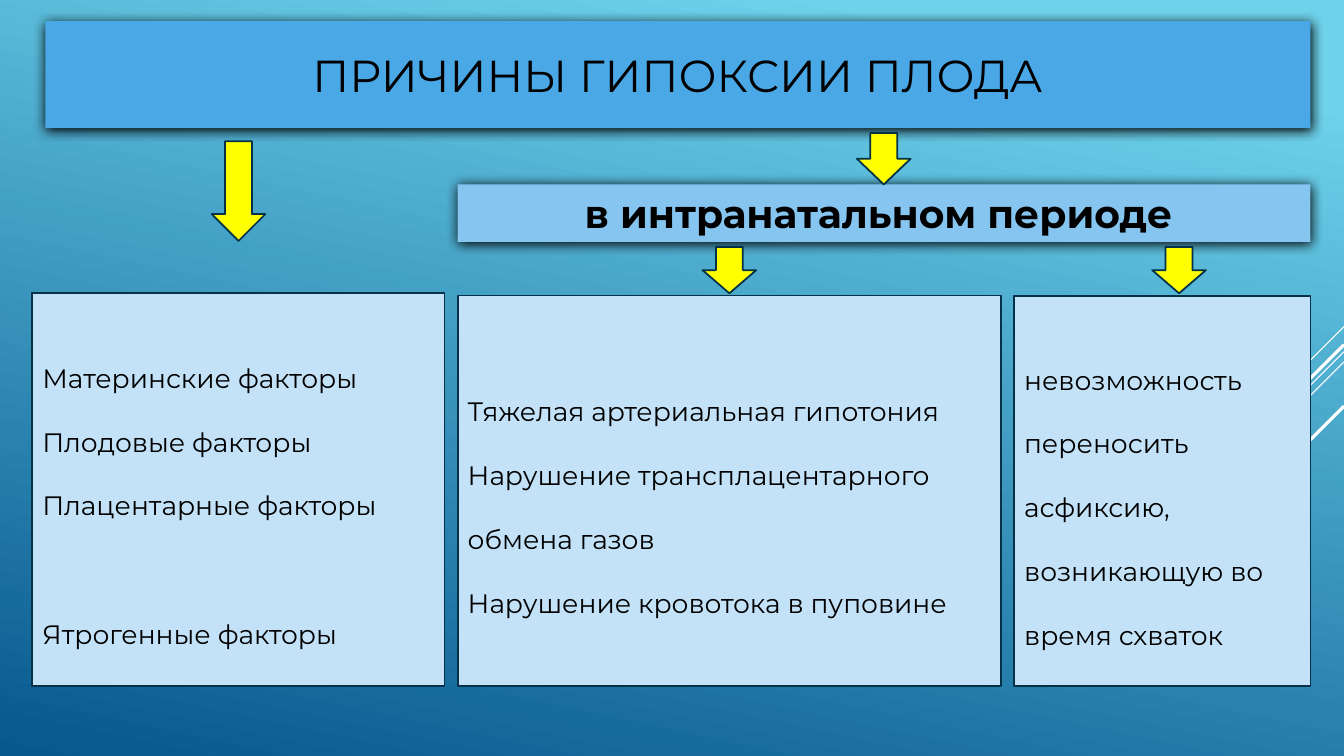
import pptx
import pptx.util
import pptx.dml.color
import pptx.enum.shapes
import pptx.enum.text
import pptx.oxml
import pptx.oxml.ns
import lxml.etree

Pt = pptx.util.Pt
RGBColor = pptx.dml.color.RGBColor
ALIGN = pptx.enum.text.PP_ALIGN

SKY = RGBColor(0x6E, 0xD2, 0xEB)
DEEP = RGBColor(0x06, 0x58, 0x8E)
BLUE = RGBColor(0x4A, 0xA8, 0xE7)
MID = RGBColor(0x86, 0xC5, 0xEF)
PALE = RGBColor(0xC3, 0xE2, 0xF7)
NAVY = RGBColor(0x04, 0x31, 0x48)
GOLD = RGBColor(0xFF, 0xFF, 0x00)
WHITE = RGBColor(0xFF, 0xFF, 0xFF)
BLACK = RGBColor(0, 0, 0)

WIDE = pptx.util.Inches(13.33)
HIGH = pptx.util.Inches(7.5)
FONT = "Montserrat"
LEFT, RIGHT, BASE = 34.05, 97.5, 90.75

MOTHER = ["Материнские факторы", "Плодовые факторы",
          "Плацентарные факторы", "Ятрогенные факторы"]
BIRTH = ["Тяжелая артериальная гипотония",
         "Нарушение трансплацентарного обмена газов",
         "Нарушение кровотока в пуповине"]
STRESS = ["невозможность переносить асфиксию, возникающую во время схваток"]


def col(share):
    return round(WIDE * share / 100)


def row(share):
    return round(HIGH * share / 100)


def node(parent, tag, **attrs):
    return lxml.etree.SubElement(parent, pptx.oxml.ns.qn(tag), attrs)


def paint(shape, color, edge=None):
    shape.fill.solid()
    shape.fill.fore_color.rgb = color
    if edge is None:
        shape.line.fill.background()
    else:
        shape.line.color.rgb = edge
        shape.line.width = Pt(1.25)
    shape.shadow.inherit = False


def shade(shape):
    effect = shape._element.spPr.find(pptx.oxml.ns.qn("a:effectLst"))
    outer = node(effect, "a:outerShdw", blurRad=str(Pt(8.5)), dist=str(Pt(1)),
                 dir="5400000", algn="ctr", rotWithShape="0")
    node(outer, "a:srgbClr", val=str(BLACK))


def place(shape, x, y, right, base):
    shape.left, shape.top = col(x), row(y)
    shape.width, shape.height = col(right - x), row(base - y)


def write(shape, lines, size, align, space=1, bold=False):
    frame = shape.text_frame
    frame.text = "\n".join(lines)
    frame.word_wrap = True
    frame.auto_size = pptx.enum.text.MSO_AUTO_SIZE.NONE
    frame.vertical_anchor = pptx.enum.text.MSO_ANCHOR.MIDDLE
    for para in frame.paragraphs:
        para.alignment = align
        para.line_spacing = space
        para.space_before = para.space_after = Pt(0)
        props = para._p.get_or_add_pPr()
        props.set("marL", "0")
        props.set("indent", "0")
        node(props, "a:buNone")
        for run in para.runs:
            run.font.name = FONT
            run.font.size = Pt(size)
            run.font.bold = bold
            run.font.color.rgb = BLACK


def banner(shape, box, text, color, size, bold=False):
    place(shape, *box)
    paint(shape, color)
    shade(shape)
    write(shape, [text], size, ALIGN.CENTER, bold=bold)


def panel(shape, box, lines):
    place(shape, *box)
    paint(shape, PALE, NAVY)
    write(shape, lines, 19, ALIGN.LEFT, space=2.0)


def arrow(slide, x, y, high):
    kind = pptx.enum.shapes.MSO_SHAPE.DOWN_ARROW
    shape = slide.shapes.add_shape(kind, col(x), row(y), col(4), row(high))
    paint(shape, GOLD, NAVY)


def ray(slide, y, run, width):
    kind = pptx.enum.shapes.MSO_CONNECTOR.STRAIGHT
    line = slide.shapes.add_connector(
        kind, WIDE, row(y), WIDE - col(run), row(y) + col(run))
    line.line.color.rgb = WHITE
    line.line.width = Pt(width)
    node(line._element.spPr, "a:effectLst")
    slide.shapes._spTree.insert(2, line._element)


def backdrop(slide):
    fill = slide.background.fill
    fill.gradient()
    fill.gradient_angle = 258
    for stop, color, spot in zip(fill.gradient_stops, (SKY, DEEP), (0.1, 1)):
        stop.color.rgb = color
        stop.position = spot
    for y, run, width in ((43.2, 7.5, 0.75), (46.53, 24.45, 0.75),
                          (47.87, 15.53, 0.75), (45.6, 14.32, 2.25),
                          (53.73, 10.42, 2.25)):
        ray(slide, y, run, width)


def main():
    deck = pptx.Presentation()
    deck.slide_width, deck.slide_height = WIDE, HIGH
    slide = deck.slides.add_slide(deck.slide_layouts[4])
    title, head, first, second, third = list(slide.placeholders)[:5]
    for spare in list(slide.placeholders)[5:]:
        spare._element.getparent().remove(spare._element)

    backdrop(slide)
    banner(title, (3.38, 2.8, RIGHT, 16.93),
           "ПРИЧИНЫ ГИПОКСИИ ПЛОДА", BLUE, 32)
    banner(head, (LEFT, 24.4, RIGHT, 32),
           "в интранатальном периоде ", MID, 28, bold=True)
    panel(first, (2.4, 38.8, 33.08, BASE), MOTHER)
    first.text_frame.paragraphs[-1].space_before = Pt(46)
    panel(second, (LEFT, 39.07, 74.48, BASE), BIRTH)
    panel(third, (75.45, 39.2, RIGHT, BASE), STRESS)
    for x, y, high in ((15.75, 18.67, 13.2), (63.76, 17.6, 6.8),
                       (52.27, 32.67, 6.13), (85.73, 32.67, 6.13)):
        arrow(slide, x, y, high)
    deck.save("out.pptx")


if __name__ == "__main__":
    main()
